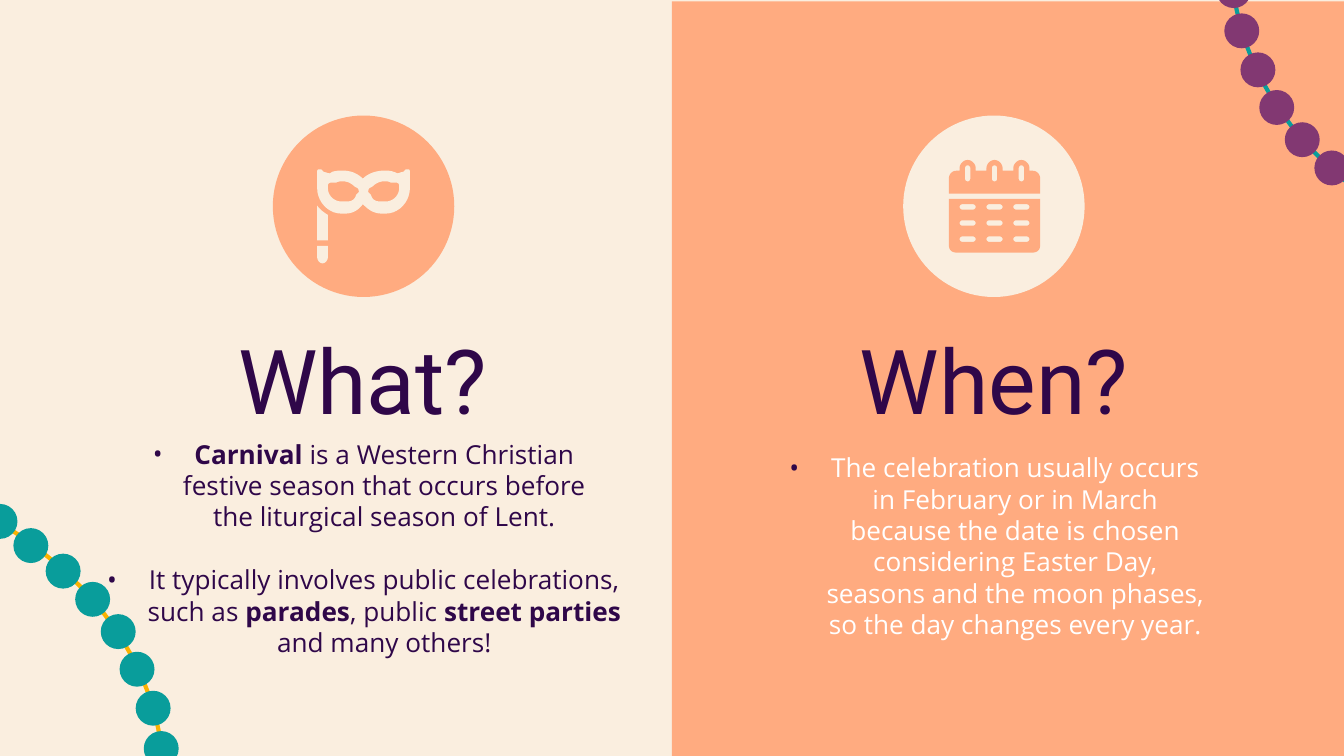
from dataclasses import dataclass
from math import cos, pi, sin

from lxml.etree import SubElement
from pptx import Presentation
from pptx.dml.color import RGBColor
from pptx.enum.shapes import MSO_SHAPE
from pptx.enum.text import MSO_ANCHOR, PP_ALIGN
from pptx.oxml.ns import qn
from pptx.util import Pt

PX = 9144  # EMU in one px, 100 px to the inch
HARD = chr(160)  # no-break space, typed as ~ in the texts below


@dataclass
class Theme:
    cream: str = "FAEEDF"
    peach: str = "FFAB80"
    plum: str = "823872"
    teal: str = "099D9B"
    gold: str = "FAB200"
    ink: str = "2F0749"
    white: str = "FFFFFF"
    head: str = "Roboto"
    body: str = "Open Sans"
    big: float = 48
    small: float = 14
    lead: float = 16.8
    cord: float = 2.25


def rgb(code):
    return RGBColor.from_string(code)


def trace(nodes, steps=10):
    """Turn points and six-number cubic curves into a plain list of points."""
    pts = [nodes[0]]
    for node in nodes[1:]:
        if len(node) == 2:
            pts.append(node)
            continue
        x, y = pts[-1]
        a, b, c, d, e, f = node
        for i in range(1, steps + 1):
            t = i / steps
            u = 1 - t
            k = (u ** 3, 3 * u * u * t, 3 * u * t * t, t ** 3)
            pts.append((k[0] * x + k[1] * a + k[2] * c + k[3] * e,
                        k[0] * y + k[1] * b + k[2] * d + k[3] * f))
    return pts


def pill(x, y, w, h, steps=6):
    """Outline of a slot with fully rounded ends."""
    r = min(w, h) / 2
    pts = []
    corners = [(x + w - r, y + h - r), (x + r, y + h - r), (x + r, y + r), (x + w - r, y + r)]
    for i, (cx, cy) in enumerate(corners):
        for j in range(steps + 1):
            a = (i + j / steps) * pi / 2
            pts.append((cx + r * cos(a), cy + r * sin(a)))
    return pts


class Deck:
    def __init__(self, theme):
        self.theme = theme
        self.prs = Presentation()
        self.prs.slide_width, self.prs.slide_height = Pt(720), Pt(405)
        self.slide = self.prs.slides.add_slide(self.prs.slide_layouts[6])
        fill = self.slide.background.fill
        fill.solid()
        fill.fore_color.rgb = rgb(theme.cream)

    def paint(self, shape, color):
        shape.shadow.inherit = False
        shape.fill.solid()
        shape.fill.fore_color.rgb = rgb(color)
        shape.line.fill.background()

    def block(self, kind, x, y, w, h, color):
        shape = self.slide.shapes.add_shape(kind, x * PX, y * PX, w * PX, h * PX)
        self.paint(shape, color)

    def disc(self, x, y, size, color):
        """Circle around the centre x, y."""
        half = (size + 1) // 2
        self.block(MSO_SHAPE.OVAL, x - half, y - half, size, size, color)

    def outline(self, loops, close=True):
        loops = [[(x * PX, y * PX) for x, y in loop] for loop in loops]
        pen = self.slide.shapes.build_freeform(*loops[0][0])
        for i, loop in enumerate(loops):
            if i:
                pen.move_to(*loop[0])
            pen.add_line_segments(loop[1:], close=close)
        return pen.convert_to_shape()

    def icon(self, color, *loops):
        self.paint(self.outline(loops), color)

    def strand(self, cord, beads, line, color):
        shape = self.outline([cord], close=False)
        shape.shadow.inherit = False
        shape.fill.background()
        shape.line.color.rgb = rgb(line)
        shape.line.width = Pt(self.theme.cord)
        for x, y in beads:
            self.disc(x, y, 26, color)

    def frame(self, x, y, w, h):
        box = self.slide.shapes.add_textbox(x * PX, y * PX, w * PX, h * PX)
        frame = box.text_frame
        frame.word_wrap = True
        frame.vertical_anchor = MSO_ANCHOR.TOP
        frame.margin_left = frame.margin_right = 10 * PX
        frame.margin_top = frame.margin_bottom = 10 * PX
        return frame

    def style(self, run, font, size, color, bold=False):
        run.font.name, run.font.size, run.font.bold = font, Pt(size), bold
        run.font.color.rgb = rgb(color)

    def title(self, x, y, w, h, text):
        frame = self.frame(x, y, w, h)
        frame.text = text
        para = frame.paragraphs[0]
        para.alignment = PP_ALIGN.CENTER
        self.style(para.runs[0], self.theme.head, self.theme.big, self.theme.ink)

    def mark(self, para):
        """Give the paragraph a hanging bullet."""
        props = para._p.get_or_add_pPr()
        props.set("marL", str(31 * PX))
        props.set("indent", str(-31 * PX))
        tint = SubElement(props, qn("a:buClr"))
        SubElement(tint, qn("a:srgbClr")).set("val", self.theme.ink)
        SubElement(props, qn("a:buSzPts")).set("val", str(self.theme.small * 100))
        SubElement(props, qn("a:buFont")).set("typeface", self.theme.body)
        SubElement(props, qn("a:buChar")).set("char", "•")

    def bullets(self, x, y, w, h, items, color):
        """Each item is a list of pairs: a text and whether it is bold."""
        t = self.theme
        frame = self.frame(x, y, w, h)
        for i, item in enumerate(items):
            para = frame.add_paragraph() if i else frame.paragraphs[0]
            para.alignment = PP_ALIGN.CENTER
            para.line_spacing = Pt(t.lead)
            if i:
                para.space_before = Pt(t.lead)
            self.mark(para)
            for text, bold in item:
                run = para.add_run()
                run.text = text.replace("~", HARD)
                self.style(run, t.body, t.small, color, bold)


CORD = trace([(918, -53), (918, -53, 890, 80, 1055, 171)], 30)
BEADS = [(918, -7), (924, 23), (936, 52), (950, 80), (969, 104), (991, 125)]
TAIL = [(1015, 144), (1038, 162)]

MASK = [(303, 126), (302, 126), (300, 128), (298, 128, 297, 129, 296, 129),
        (295, 129, 294, 128, 293, 128), (291, 127, 288, 127, 286, 127),
        (280, 127, 274, 129, 270, 133), (266, 129, 261, 127, 255, 127),
        (252, 127, 250, 127, 247, 128), (247, 128, 246, 129, 245, 129),
        (244, 129, 242, 128, 241, 128), (239, 126), (238, 126),
        (237, 126, 236, 126, 236, 128), (236, 140), (236, 150, 244, 159, 254, 159),
        (257, 159), (263, 159, 267, 156, 270, 152), (274, 156, 278, 159, 284, 159),
        (287, 159), (297, 159, 305, 150, 305, 140), (305, 128), (305, 127, 305, 126, 303, 126)]
RIGHT = [(286, 135), (288, 135, 289, 135, 291, 136), (295, 136), (296, 136, 297, 137, 297, 138),
         (297, 140), (297, 146, 292, 150, 287, 150), (283, 150), (280, 150, 277, 149, 276, 145),
         (274, 143), (274, 142, 274, 141, 275, 140), (277, 139), (280, 136, 283, 135, 286, 135)]
LEFT = [(541 - x, y) for x, y in trace(RIGHT)]
GRIP = [(236, 153), (236, 179), (244, 179), (244, 160), (241, 158, 238, 156, 236, 153)]
TIP = [(236, 183), (236, 191), (236, 194, 238, 196, 240, 196),
       (242, 196, 244, 194, 244, 191), (244, 183)]

RINGS = (714, 734, 754)
TOP = [(706, 144), (706, 133), (706, 130, 708, 127, 712, 127)]
for left in RINGS:
    TOP += [(left, 127), (left, 125), (left, 122, left + 3, 119, left + 6, 119),
            (left + 9, 119, left + 12, 122, left + 12, 125), (left + 12, 127)]
TOP += [(768, 127), (772, 127, 774, 130, 774, 133), (774, 144)]
PAGE = [(706, 148), (706, 182), (706, 186, 708, 188, 712, 188), (768, 188),
        (772, 188, 774, 186, 774, 182), (774, 148)]


def turn(points):
    """Half turn that carries the top strand to the bottom corner."""
    return [(1038 - x, 550 - y) for x, y in points]


def main():
    t = Theme()
    deck = Deck(t)
    deck.block(MSO_SHAPE.RECTANGLE, 500, 1, 500, 562, t.peach)
    deck.strand(CORD, BEADS, t.teal, t.plum)
    deck.strand(turn(CORD), turn(BEADS + TAIL), t.gold, t.teal)

    deck.title(587, 232, 305, 84, "When?")
    deck.bullets(570, 326, 340, 111, [[
        ("The celebration usually occurs in February or in March because the date is chosen "
         "considering Easter Day, seasons and the moon phases, so the day changes every year.",
         False)]], t.white)
    deck.title(98, 232, 344, 84, "What?")
    deck.bullets(61, 316, 419, 182, [
        [("Carnival", True),
         ("~is a~Western Christian festive~season~that occurs before "
          "the~liturgical~season of~Lent.", False)],
        [("It typically involves public~celebrations, such as ", False), ("parades", True),
         (", public~", False), ("street parties ", True), ("and many others!", False)],
    ], t.ink)

    deck.disc(271, 154, 135, t.peach)
    deck.disc(740, 154, 135, t.cream)
    deck.icon(t.cream, trace(MASK), LEFT, trace(RIGHT))
    deck.icon(t.cream, trace(GRIP))
    deck.icon(t.cream, trace(TIP))
    days = [pill(x, y, 12, 4) for y in (152, 164, 176) for x in RINGS]
    deck.icon(t.peach, trace(PAGE), *days)
    deck.icon(t.peach, trace(TOP), *[pill(x + 4, 123, 4, 12) for x in RINGS])
    deck.prs.save("out.pptx")


if __name__ == "__main__":
    main()
